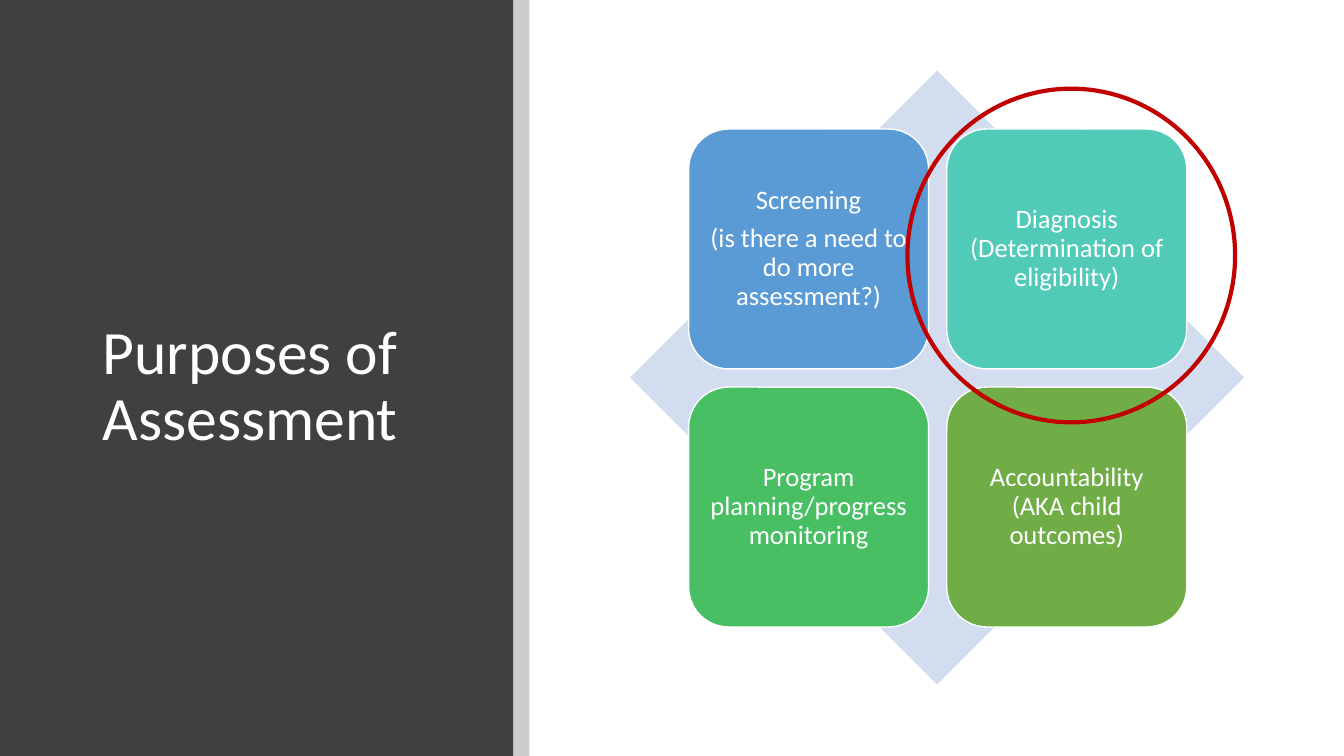
from itertools import product

from lxml.etree import SubElement
from pptx import Presentation
from pptx.dml.color import RGBColor
from pptx.enum.shapes import MSO_SHAPE
from pptx.enum.text import MSO_ANCHOR, PP_ALIGN
from pptx.oxml.ns import qn
from pptx.util import Emu, Pt

EMU_PER_PX = 9144  # 100 px to the inch
WHITE = "FFFFFF"


def px(length):
    return Emu(length * EMU_PER_PX)


def color(hex_string):
    return RGBColor.from_string(hex_string)


class SlideBuilder:
    font_name = "Calibri"
    line_spacing = 0.9

    def __init__(self, slide):
        self.slide = slide

    def shape(self, kind, box, fill=None, line=None, opacity=None):
        """Add a preset shape; line is (colour, points), opacity a percentage."""
        shape = self.slide.shapes.add_shape(kind, *map(px, box))
        shape.shadow.inherit = False
        if fill:
            shape.fill.solid()
            shape.fill.fore_color.rgb = color(fill)
        else:
            shape.fill.background()
        if opacity is not None:
            rgb = shape.fill._xPr.find(qn("a:solidFill"))[0]
            SubElement(rgb, qn("a:alpha"), val=str(opacity * 1000))
        if line:
            shape.line.color.rgb = color(line[0])
            shape.line.width = Pt(line[1])
        else:
            shape.line.fill.background()
        return shape

    def fill_text(self, frame, paragraphs, size, align, space_after=0):
        frame.word_wrap = True
        frame.vertical_anchor = MSO_ANCHOR.MIDDLE
        for index, text in enumerate(paragraphs):
            paragraph = frame.add_paragraph() if index else frame.paragraphs[0]
            paragraph.alignment = align
            paragraph.line_spacing = self.line_spacing
            paragraph.space_after = Pt(space_after)
            run = paragraph.add_run()
            run.text = text
            run.font.name = self.font_name
            run.font.size = Pt(size)
            run.font.color.rgb = color(WHITE)

    def title(self, box, text):
        frame = self.slide.shapes.add_textbox(*map(px, box)).text_frame
        self.fill_text(frame, [text], 44, PP_ALIGN.LEFT)

    def tile(self, box, paragraphs, fill):
        frame = self.shape(MSO_SHAPE.ROUNDED_RECTANGLE, box, fill, (WHITE, 1)).text_frame
        frame.margin_left = frame.margin_right = px(8)
        frame.margin_top = frame.margin_bottom = px(8)
        self.fill_text(frame, paragraphs, 19, PP_ALIGN.CENTER, space_after=6.65)


PURPOSES = [
    (["Screening", "(is there a need to do more assessment?)"], "5B9BD5"),
    (["Diagnosis (Determination of eligibility)"], "52CAB8"),
    (["Program planning/progress monitoring"], "49BF64"),
    (["Accountability (AKA child outcomes)"], "70AD47"),
]
TILE_LEFT, TILE_TOP, TILE_SIZE, TILE_PITCH = 683, 128, 238, 256


def main():
    presentation = Presentation()
    presentation.slide_width, presentation.slide_height = px(1333), px(750)
    builder = SlideBuilder(presentation.slides.add_slide(presentation.slide_layouts[6]))

    builder.shape(MSO_SHAPE.RECTANGLE, (0, 0, 509, 750), "404040")
    builder.title((92, 89, 365, 591), "Purposes of Assessment")
    builder.shape(MSO_SHAPE.RECTANGLE, (509, 0, 16, 750), "000000", opacity=20)

    builder.shape(MSO_SHAPE.DIAMOND, (625, 70, 609, 609), "D2DEEF")
    for (row, column), (paragraphs, fill) in zip(product(range(2), repeat=2), PURPOSES):
        left = TILE_LEFT + column * TILE_PITCH
        top = TILE_TOP + row * TILE_PITCH
        builder.tile((left, top, TILE_SIZE, TILE_SIZE), paragraphs, fill)
    builder.shape(MSO_SHAPE.OVAL, (900, 88, 325, 331), line=("C00000", 3))

    presentation.save("out.pptx")


if __name__ == "__main__":
    main()
